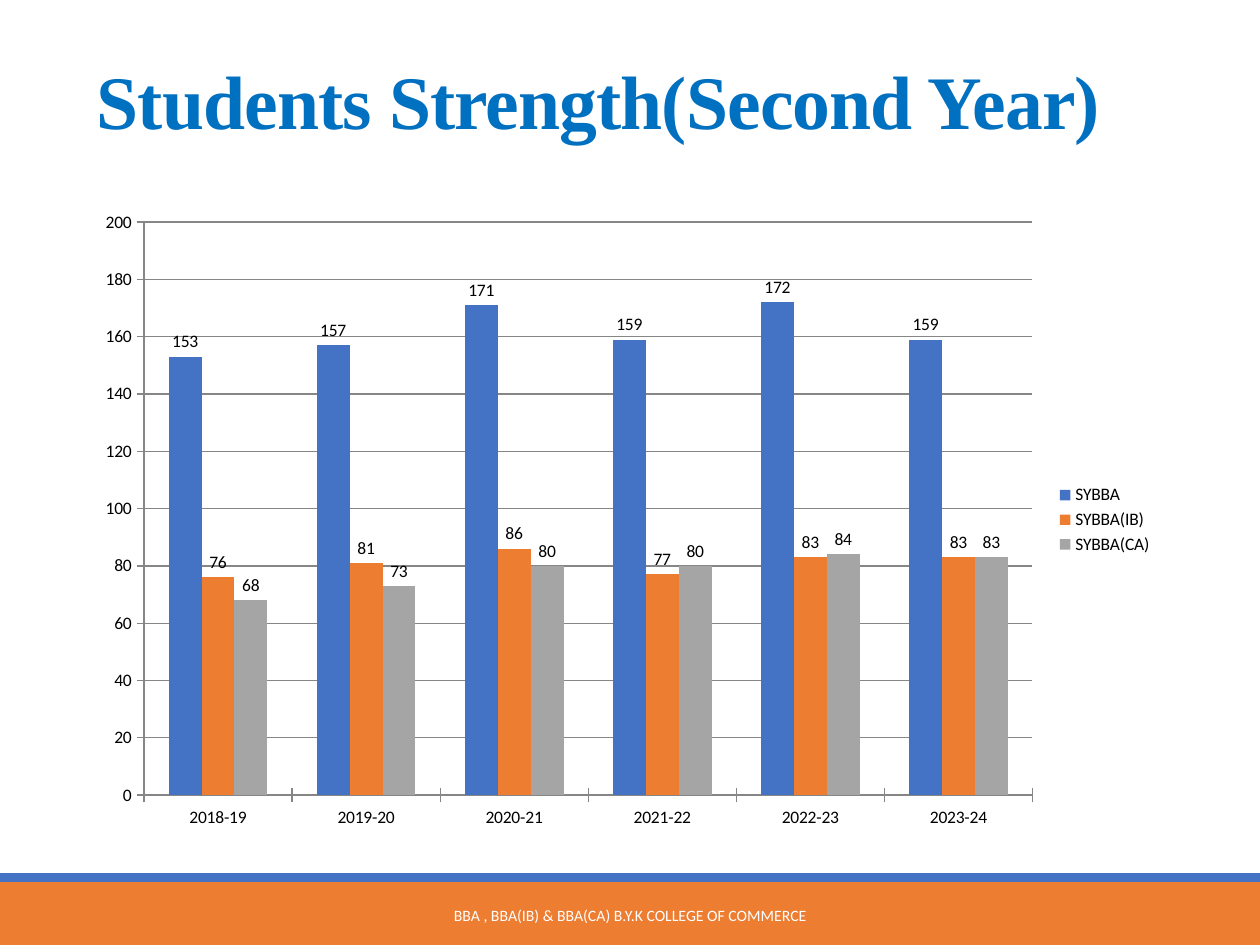
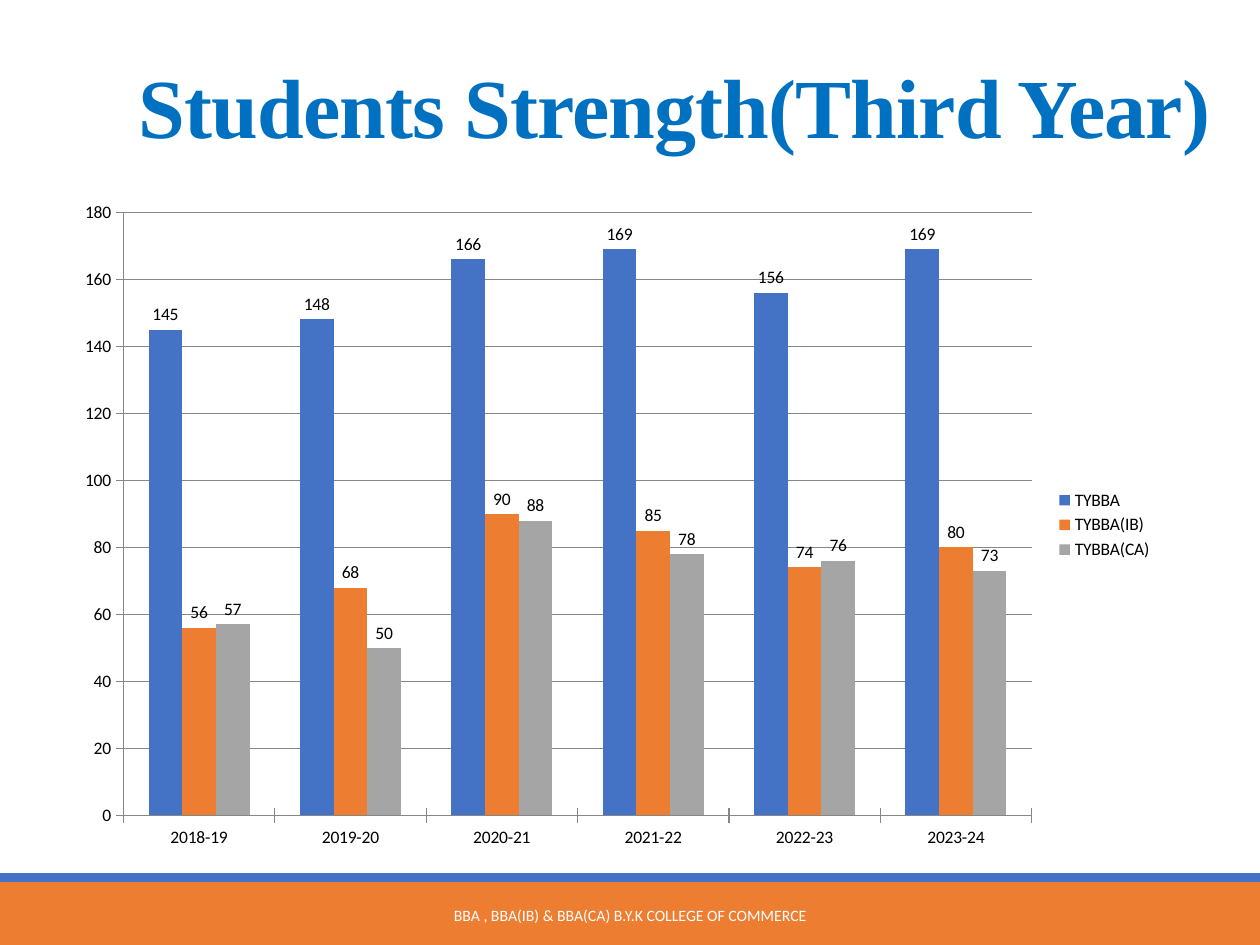
import pptx
import pptx.chart.data
import pptx.dml.color
import pptx.enum.chart
import pptx.enum.shapes
import pptx.enum.text
import pptx.util

Pt = pptx.util.Pt

# Shared look
BLUE, ORANGE, GREY = "4472C4", "ED7D31", "A5A5A5"
TITLE_BLUE, WHITE, BLACK, AXIS_GREY = "0070C0", "FFFFFF", "000000", "868686"
BODY_FONT, TITLE_FONT = "Calibri", "Times New Roman"
SLIDE_WIDTH, SLIDE_HEIGHT = 720, 540
FOOTER_BOX = (0, 499, SLIDE_WIDTH, 41)
FOOTER_TEXT = "BBA , BBA(IB) & BBA(CA) B.Y.K COLLEGE OF COMMERCE"

# Student numbers, one row per course
YEARS = ["2018-19", "2019-20", "2020-21", "2021-22", "2022-23", "2023-24"]
SECOND_YEAR = {
    "SYBBA": (153, 157, 171, 159, 172, 159),
    "SYBBA(IB)": (76, 81, 86, 77, 83, 83),
    "SYBBA(CA)": (68, 73, 80, 80, 84, 83),
}
THIRD_YEAR = {
    "TYBBA": (145, 148, 166, 169, 156, 169),
    "TYBBA(IB)": (56, 68, 90, 85, 74, 80),
    "TYBBA(CA)": (57, 50, 88, 78, 76, 73),
}


def color(hex_code):
    return pptx.dml.color.RGBColor.from_string(hex_code)


def style_font(font, size, face, hex_code, bold=False):
    font.size = Pt(size)
    font.name = face
    font.bold = bold
    font.color.rgb = color(hex_code)


def write_text(frame, text, *, size, face, hex_code, bold=False,
               align=None, anchor=None, line_spacing=None, tracking=None):
    frame.word_wrap = True
    frame.auto_size = pptx.enum.text.MSO_AUTO_SIZE.NONE
    frame.vertical_anchor = anchor
    paragraph = frame.paragraphs[0]
    paragraph.alignment = align
    paragraph.line_spacing = line_spacing
    run = paragraph.add_run()
    run.text = text
    style_font(run.font, size, face, hex_code, bold)
    if tracking is not None:
        run._r.get_or_add_rPr().set("spc", str(round(tracking * 100)))


def add_band(slide, box, hex_code):
    band = slide.shapes.add_shape(
        pptx.enum.shapes.MSO_SHAPE.RECTANGLE, *map(Pt, box))
    band.shadow.inherit = False
    band.fill.solid()
    band.fill.fore_color.rgb = color(hex_code)
    band.line.fill.background()


def add_footer(slide, box):
    left, top, width, height = box
    stripe = 5
    add_band(slide, (left, top + stripe, width, height - stripe), ORANGE)
    add_band(slide, (left, top, width, stripe), BLUE)

    caption_width, caption_height = 285, 29
    caption = slide.shapes.add_textbox(
        Pt(left + (width - caption_width) / 2), Pt(top + 9.5),
        Pt(caption_width), Pt(caption_height))
    write_text(caption.text_frame, FOOTER_TEXT, size=9, face=BODY_FONT,
               hex_code=WHITE, align=pptx.enum.text.PP_ALIGN.CENTER,
               anchor=pptx.enum.text.MSO_ANCHOR.MIDDLE)


def place_title(slide, box, text, size):
    title = slide.shapes.title
    title.left, title.top, title.width, title.height = map(Pt, box)
    write_text(title.text_frame, text, size=size, face=TITLE_FONT,
               hex_code=TITLE_BLUE, bold=True,
               align=pptx.enum.text.PP_ALIGN.LEFT,
               anchor=pptx.enum.text.MSO_ANCHOR.BOTTOM,
               line_spacing=0.85, tracking=-0.5)


def add_strength_chart(slide, box, strength, top_value):
    data = pptx.chart.data.CategoryChartData()
    data.categories = YEARS
    for course, counts in strength.items():
        data.add_series(course, counts)
    chart = slide.shapes.add_chart(
        pptx.enum.chart.XL_CHART_TYPE.COLUMN_CLUSTERED,
        *map(Pt, box), data).chart
    style_font(chart.font, 10, BODY_FONT, BLACK)
    chart.has_title = False

    # Legend
    chart.has_legend = True
    chart.legend.position = pptx.enum.chart.XL_LEGEND_POSITION.RIGHT
    chart.legend.include_in_layout = False

    # Axes and gridlines
    counts_axis = chart.value_axis
    counts_axis.minimum_scale, counts_axis.maximum_scale = 0, top_value
    counts_axis.major_unit = 20
    counts_axis.has_major_gridlines = True
    for axis in (chart.category_axis, counts_axis):
        axis.major_tick_mark = pptx.enum.chart.XL_TICK_MARK.CROSS
    for ruled in (chart.category_axis, counts_axis,
                  counts_axis.major_gridlines):
        ruled.format.line.color.rgb = color(AXIS_GREY)
        ruled.format.line.width = Pt(0.75)

    # Columns and their values
    plot = chart.plots[0]
    plot.vary_by_categories = False
    plot.gap_width, plot.overlap = 150, 0
    for course, hex_code in zip(plot.series, (BLUE, ORANGE, GREY)):
        course.format.fill.solid()
        course.format.fill.fore_color.rgb = color(hex_code)
        labels = course.data_labels
        labels.show_value = True
        labels.position = pptx.enum.chart.XL_LABEL_POSITION.OUTSIDE_END


def add_strength_slide(deck, heading, heading_size, heading_box,
                       strength, chart_box, top_value):
    title_only = deck.slide_layouts[5]
    slide = deck.slides.add_slide(title_only)
    slide.background.fill.solid()
    slide.background.fill.fore_color.rgb = color(WHITE)
    add_footer(slide, FOOTER_BOX)
    place_title(slide, heading_box, heading, heading_size)
    add_strength_chart(slide, chart_box, strength, top_value)


def main():
    deck = pptx.Presentation()
    deck.slide_width, deck.slide_height = Pt(SLIDE_WIDTH), Pt(SLIDE_HEIGHT)
    add_strength_slide(deck, "Students Strength(Second Year)", 43.2,
                       (48, 18, 648, 68.4),
                       SECOND_YEAR, (48, 114, 618, 366), 200)
    add_strength_slide(deck, "Students Strength(Third Year)", 48,
                       (72, 24, 648, 68.4),
                       THIRD_YEAR, (36, 108, 630, 384), 180)
    deck.save("out.pptx")


if __name__ == "__main__":
    main()
